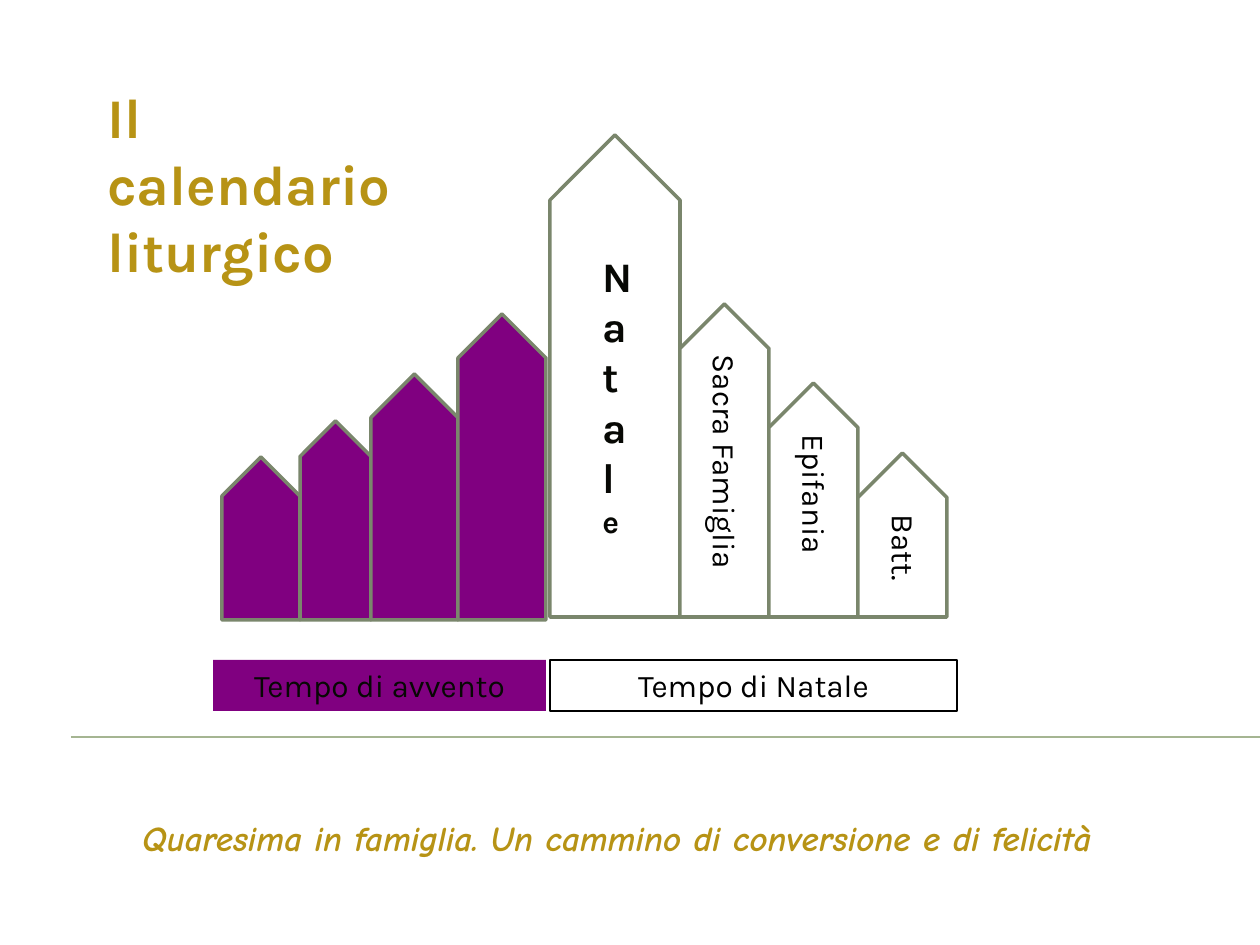
from dataclasses import dataclass

import pptx
import pptx.dml.color
import pptx.enum.shapes
import pptx.enum.text
import pptx.oxml.ns
import pptx.util
from lxml import etree

PX_PER_INCH = 126
COLORS = {
    "gold": "B79315",
    "purple": "800080",
    "white": "FFFFFF",
    "outline": "7A866C",
    "rule": "A5B592",
    "ink": "070804",
    "black": "000000",
}
SHAPES = pptx.enum.shapes.MSO_SHAPE
ALIGN = pptx.enum.text.PP_ALIGN


@dataclass(frozen=True)
class House:
    """An upright arrow plate standing on its season's baseline."""
    left: int
    top: int
    width: int
    base: int
    fill: str


@dataclass(frozen=True)
class Label:
    text: str
    left: int
    top: int
    width: int
    height: int
    size: int = 18
    color: str = "black"
    font: str = "Karla"
    bold: bool = False
    italic: bool = False
    centered: bool = False
    rotation: int = 0
    fill: str | None = None
    border: str | None = None


ADVENT_BASE, CHRISTMAS_BASE = 620, 617
HOUSES = [
    House(550, 135, 130, CHRISTMAS_BASE, "white"),
    *[House(left, top, width, ADVENT_BASE, "purple")
      for left, top, width in ((222, 457, 78), (300, 421, 71), (371, 374, 87), (458, 314, 88))],
    *[House(680 + 89 * index, top, 89, CHRISTMAS_BASE, "white")
      for index, top in enumerate((304, 383, 453))],
]
LABELS = [
    Label("Na\nt\na\nl\ne", 590, 244, 50, 317, 24, "ink", bold=True, fill="white"),
    Label("Tempo di avvento", 213, 660, 333, 51, color="ink", centered=True, fill="purple"),
    Label("Sacra Famiglia", 595, 447, 260, 51, rotation=90),
    Label("Epifania", 735, 476, 159, 51, rotation=90),
    Label("Batt.", 854, 527, 100, 51, rotation=90),
    Label("Tempo di Natale", 550, 660, 407, 51, centered=True, fill="white", border="black"),
    Label("Il calendario liturgico", 95, 76, 338, 149, 32, "gold", bold=True),
    Label("Quaresima in famiglia. Un cammino di conversione e di felicità",
          0, 810, 1235, 55, 20, "gold", "Comic Neue", bold=True, italic=True, centered=True),
]


def px(length: float) -> int:
    return round(length * pptx.util.Inches(1) / PX_PER_INCH)


def rgb(name: str) -> pptx.dml.color.RGBColor:
    return pptx.dml.color.RGBColor.from_string(COLORS[name])


def draw_rule(page) -> None:
    rule = page.shapes.add_connector(
        pptx.enum.shapes.MSO_CONNECTOR.STRAIGHT, px(71), px(737), px(1260), px(737))
    rule.line.color.rgb = rgb("rule")
    rule.line.width = pptx.util.Pt(0.75)
    etree.SubElement(rule._element.spPr, pptx.oxml.ns.qn("a:effectLst"))


def draw_house(page, house: House) -> None:
    """Turn a sideways plate upright around its own centre."""
    length = house.base - house.top
    left = house.left + (house.width - length) / 2
    top = house.top + (length - house.width) / 2
    plate = page.shapes.add_shape(
        SHAPES.PENTAGON, px(left), px(top), px(length), px(house.width))
    plate.rotation = 270
    plate.shadow.inherit = False
    plate.fill.solid()
    plate.fill.fore_color.rgb = rgb(house.fill)
    plate.line.color.rgb = rgb("outline")
    plate.line.width = pptx.util.Pt(2)


def draw_label(page, label: Label):
    box = page.shapes.add_textbox(
        px(label.left), px(label.top), px(label.width), px(label.height))
    box.rotation = label.rotation
    if label.fill:
        box.fill.solid()
        box.fill.fore_color.rgb = rgb(label.fill)
    if label.border:
        box.line.color.rgb = rgb(label.border)
        box.line.width = pptx.util.Pt(0.75)
    frame = box.text_frame
    frame.word_wrap = True
    frame.text = label.text
    for para in frame.paragraphs:
        para.alignment = ALIGN.CENTER if label.centered else ALIGN.LEFT
        para.font.name = label.font
        para.font.size = pptx.util.Pt(label.size)
        para.font.bold = label.bold
        para.font.italic = label.italic
        para.font.color.rgb = rgb(label.color)
    return box


def main() -> None:
    deck = pptx.Presentation()
    deck.slide_width, deck.slide_height = px(1260), px(945)
    page = deck.slides.add_slide(deck.slide_layouts[6])
    draw_rule(page)
    for house in HOUSES:
        draw_house(page, house)
    natale, *_ = [draw_label(page, label) for label in LABELS]
    natale.text_frame.paragraphs[-1].font.size = pptx.util.Pt(18)
    deck.save("out.pptx")


if __name__ == "__main__":
    main()
